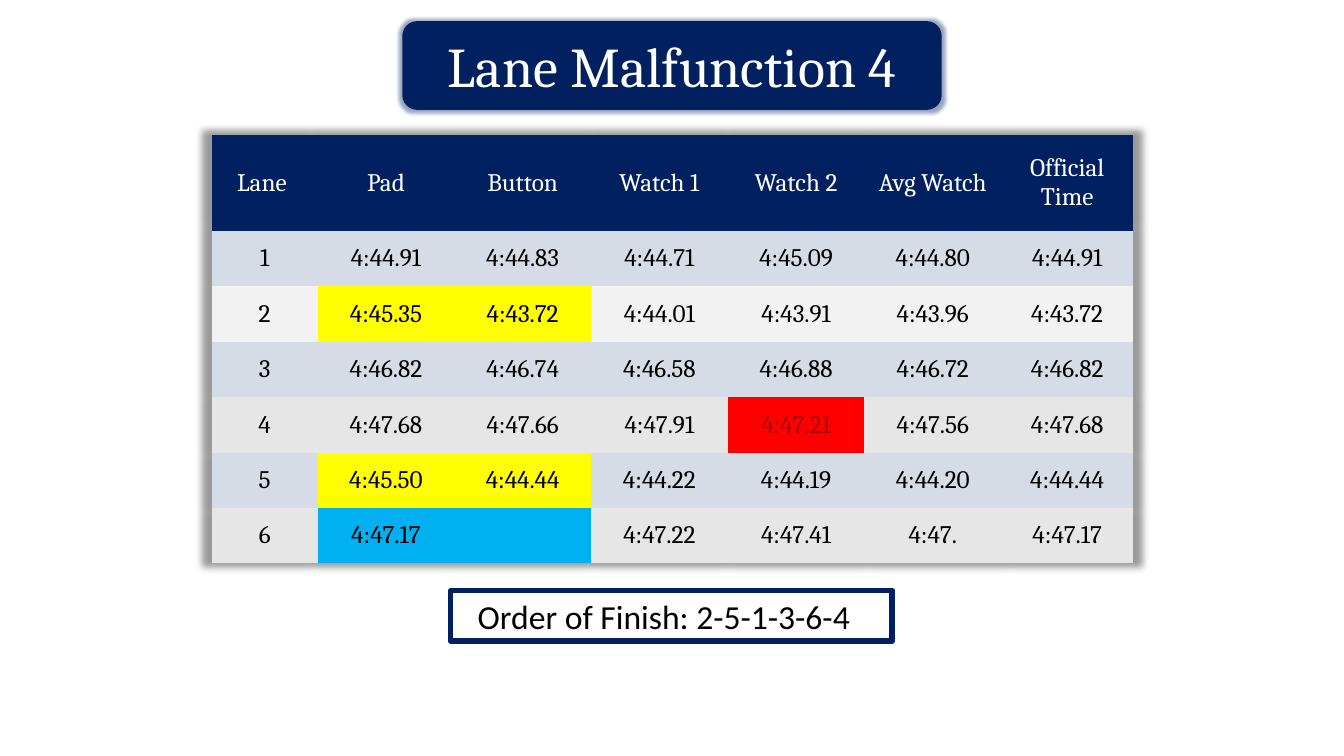
from dataclasses import dataclass

from lxml import etree
from pptx import Presentation
from pptx.dml.color import RGBColor
from pptx.enum.shapes import MSO_SHAPE
from pptx.enum.text import MSO_ANCHOR, MSO_AUTO_SIZE, PP_ALIGN
from pptx.oxml import parse_xml
from pptx.oxml.ns import nsdecls, qn
from pptx.util import Emu, Pt

EMU_PER_PX = 9144
CENTER = PP_ALIGN.CENTER
MIDDLE = MSO_ANCHOR.MIDDLE
GROW = MSO_AUTO_SIZE.SHAPE_TO_FIT_TEXT
RECTANGLE = MSO_SHAPE.RECTANGLE
ROUNDED = MSO_SHAPE.ROUNDED_RECTANGLE

NAVY = RGBColor(0x00, 0x20, 0x60)
WHITE = RGBColor(0xFF, 0xFF, 0xFF)
BLACK = RGBColor(0x00, 0x00, 0x00)
BLUE_GRAY = RGBColor(0xD6, 0xDC, 0xE5)
PALE_GRAY = RGBColor(0xF2, 0xF2, 0xF2)
GRAY = RGBColor(0xE7, 0xE6, 0xE6)
YELLOW = RGBColor(0xFF, 0xFF, 0x00)
SKY = RGBColor(0x00, 0xB0, 0xF0)
RED = RGBColor(0xFF, 0x00, 0x00)

NO_STYLE = "{2D5ABB26-0587-4C30-8999-92F81FD0307C}"
TABLE_SHADOW = (
    f'<a:effectLst {nsdecls("a")}><a:outerShdw blurRad="63500" sx="102000" '
    'sy="102000" algn="ctr" rotWithShape="0"><a:prstClr val="black">'
    '<a:alpha val="40000"/></a:prstClr></a:outerShdw></a:effectLst>'
)
TITLE_GLOW = (
    f'<a:effectLst {nsdecls("a")}><a:glow rad="63500"><a:srgbClr val="{NAVY}">'
    '<a:alpha val="40000"/></a:srgbClr></a:glow></a:effectLst>'
)


@dataclass(frozen=True)
class Box:
    left: int
    top: int
    width: int
    height: int

    def emu(self) -> tuple[Emu, Emu, Emu, Emu]:
        return px(self.left), px(self.top), px(self.width), px(self.height)


@dataclass(frozen=True)
class TextStyle:
    font: str
    size: int
    color: RGBColor


@dataclass(frozen=True)
class LaneResult:
    lane: str
    times: tuple[str, ...]
    fill: RGBColor


TABLE_BOX = Box(210, 134, 914, 425)
TITLE_BOX = Box(399, 21, 535, 88)
FINISH_BOX = Box(447, 586, 438, 50)
HEADER_HEIGHT, LANE_WIDTH, OFFICIAL_WIDTH = 95, 105, 131

TITLE_STYLE = TextStyle("Cambria", 40, WHITE)
HEADER_STYLE = TextStyle("Cambria", 18, WHITE)
TIME_STYLE = TextStyle("Cambria", 18, BLACK)
FINISH_STYLE = TextStyle("Calibri", 24, BLACK)

HEADERS = ("Lane ", "Pad", "Button", "Watch 1", "Watch 2", "Avg Watch", "Official Time")
RESULTS = (
    LaneResult("1", ("4:44.91", "4:44.83", "4:44.71", "4:45.09", "4:44.80", "4:44.91"), BLUE_GRAY),
    LaneResult("2", ("4:45.35", "4:43.72", "4:44.01", "4:43.91", "4:43.96", "4:43.72"), PALE_GRAY),
    LaneResult("3", ("4:46.82", "4:46.74", "4:46.58", "4:46.88", "4:46.72", "4:46.82"), BLUE_GRAY),
    LaneResult("4", ("4:47.68", "4:47.66", "4:47.91", "4:47.21", "4:47.56", "4:47.68"), GRAY),
    LaneResult("5", ("4:45.50", "4:44.44", "4:44.22", "4:44.19", "4:44.20", "4:44.44"), BLUE_GRAY),
    LaneResult("6", ("4:47.17", "", "4:47.22", "4:47.41", "4:47.", "4:47.17"), GRAY),
)
PAD, BUTTON, WATCH_2 = 1, 2, 4
HIGHLIGHTS = {
    ("2", PAD): YELLOW,
    ("2", BUTTON): YELLOW,
    ("4", WATCH_2): RED,
    ("5", PAD): YELLOW,
    ("5", BUTTON): YELLOW,
    ("6", PAD): SKY,
    ("6", BUTTON): SKY,
}


def px(length: int) -> Emu:
    return Emu(length * EMU_PER_PX)


def write_text(text_frame, text: str, style: TextStyle) -> None:
    paragraph = text_frame.paragraphs[0]
    paragraph.alignment = CENTER
    if not text:
        return
    run = paragraph.add_run()
    run.text = text
    run.font.name = style.font
    run.font.size = Pt(style.size)
    run.font.color.rgb = style.color


def fill_cell(cell, text: str, style: TextStyle, color: RGBColor) -> None:
    cell.vertical_anchor = MIDDLE
    cell.fill.solid()
    cell.fill.fore_color.rgb = color
    write_text(cell.text_frame, text, style)
    if color == RED:
        red = next(cell._tc.iter(qn("a:srgbClr")))
        etree.SubElement(red, qn("a:alpha"), val="34000")


def add_results_table(slide) -> None:
    table = slide.shapes.add_table(len(RESULTS) + 1, len(HEADERS), *TABLE_BOX.emu()).table
    table.first_row = False
    table.horz_banding = False
    properties = table._tbl.tblPr
    properties.find(qn("a:tableStyleId")).text = NO_STYLE
    properties.insert(0, parse_xml(TABLE_SHADOW))

    time_columns = len(HEADERS) - 2
    time_width = px(TABLE_BOX.width - LANE_WIDTH - OFFICIAL_WIDTH) // time_columns
    widths = [px(LANE_WIDTH), *[time_width] * time_columns, px(OFFICIAL_WIDTH)]
    for column, width in zip(table.columns, widths):
        column.width = width
    row_height = px(TABLE_BOX.height - HEADER_HEIGHT) // len(RESULTS)
    for row, height in zip(table.rows, [px(HEADER_HEIGHT), *[row_height] * len(RESULTS)]):
        row.height = height

    for column, header in enumerate(HEADERS):
        fill_cell(table.cell(0, column), header, HEADER_STYLE, NAVY)
    for row, result in enumerate(RESULTS, start=1):
        for column, text in enumerate((result.lane, *result.times)):
            color = HIGHLIGHTS.get((result.lane, column), result.fill)
            fill_cell(table.cell(row, column), text, TIME_STYLE, color)


def add_label(slide, kind, box: Box, fill: RGBColor, text: str, style: TextStyle):
    shape = slide.shapes.add_shape(kind, *box.emu())
    shape.shadow.inherit = False
    shape.fill.solid()
    shape.fill.fore_color.rgb = fill
    shape.line.fill.background()
    shape.text_frame.word_wrap = True
    shape.text_frame.vertical_anchor = MIDDLE
    write_text(shape.text_frame, text, style)
    return shape


def add_finish_order(slide) -> None:
    shape = add_label(
        slide, RECTANGLE, FINISH_BOX, WHITE, "Order of Finish: 2-5-1-3-6-4", FINISH_STYLE
    )
    shape.line.color.rgb = NAVY
    shape.line.width = Pt(4)
    etree.SubElement(shape.line._ln, qn("a:round"))
    shape.text_frame.auto_size = GROW
    shape.text_frame.margin_right = px(25)


def add_title(slide) -> None:
    shape = add_label(slide, ROUNDED, TITLE_BOX, NAVY, "Lane Malfunction 4", TITLE_STYLE)
    properties = shape._element.spPr
    properties.replace(properties.find(qn("a:effectLst")), parse_xml(TITLE_GLOW))


def main() -> None:
    presentation = Presentation()
    presentation.slide_width = px(1333)
    presentation.slide_height = px(750)
    slide = presentation.slides.add_slide(presentation.slide_layouts[6])
    add_results_table(slide)
    add_finish_order(slide)
    add_title(slide)
    presentation.save("out.pptx")


if __name__ == "__main__":
    main()
